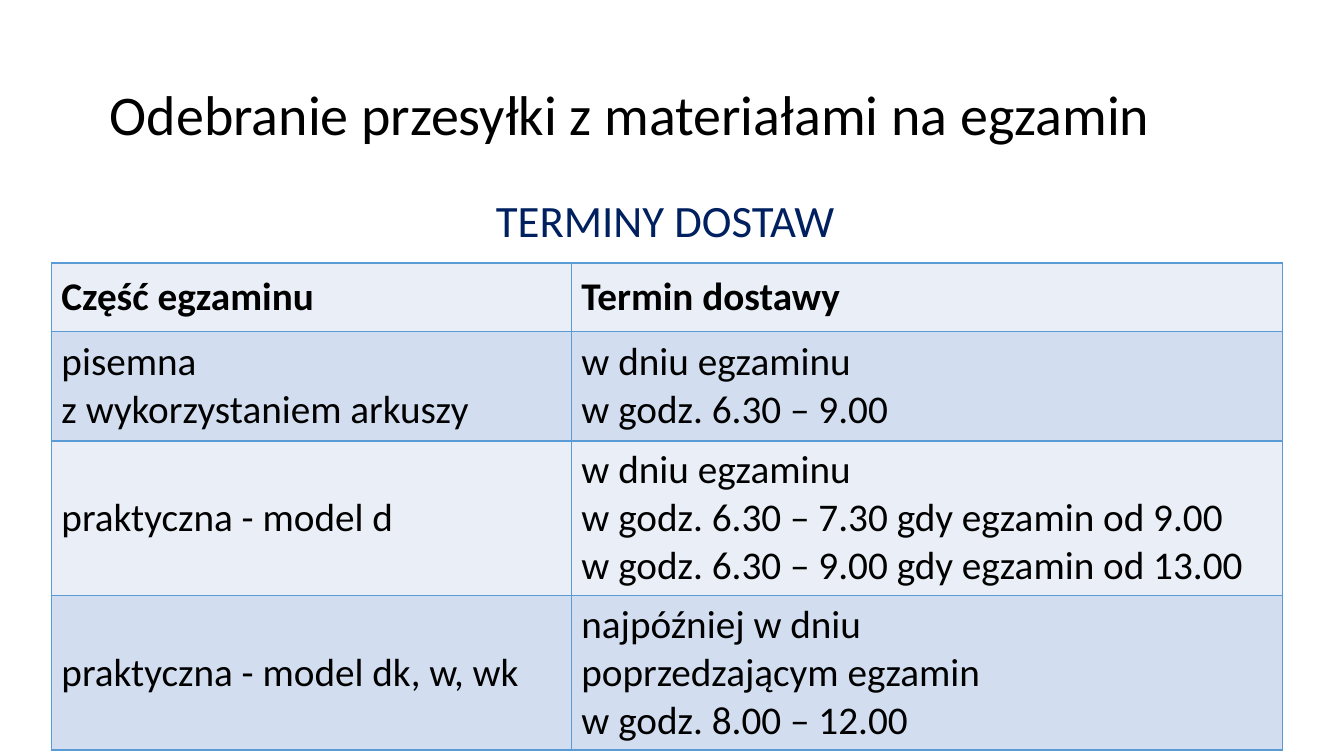
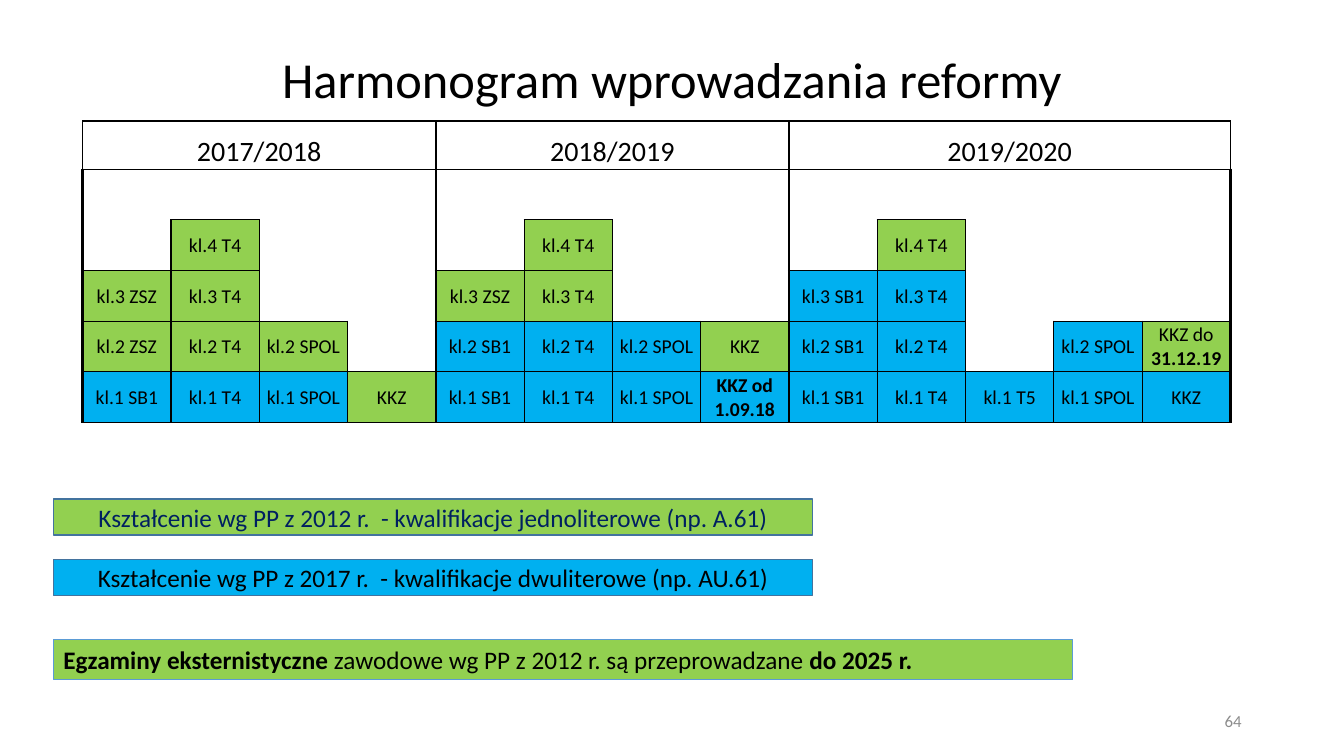
from dataclasses import dataclass

from lxml import etree
from pptx import Presentation
from pptx import util as u
from pptx.dml.color import RGBColor
from pptx.enum import shapes, text
from pptx.oxml.ns import qn


@dataclass(frozen=True)
class Theme:
    font: str = "Calibri"
    ink: str = "000000"
    navy: str = "002060"
    grey: str = "8C8C8C"
    old_programme: str = "92D050"
    new_programme: str = "00B0F0"
    rule: str = "5B9BD5"
    bar_edge: str = "43739E"
    bands: tuple = ("EAEFF7", "D2DEEF")
    title: int = 40
    title_small: int = 36
    subtitle: int = 32
    table: int = 28
    year: int = 20
    legend: int = 18
    label: int = 14
    number: int = 12


THEME = Theme()
WIDTH, HEIGHT = u.Inches(13.33), u.Inches(7.5)
COLUMNS, ROWS = 160, 90
LEFT, CENTER, RIGHT = text.PP_ALIGN.LEFT, text.PP_ALIGN.CENTER, text.PP_ALIGN.RIGHT
MIDDLE, BOTTOM = text.MSO_ANCHOR.MIDDLE, text.MSO_ANCHOR.BOTTOM

DELIVERIES = [
    ("*Część egzaminu*", "*Termin dostawy*"),
    ("pisemna\nz wykorzystaniem arkuszy", "w dniu egzaminu\nw godz. 6.30 – 9.00"),
    ("praktyczna - model d",
     "w dniu egzaminu\nw godz. 6.30 – 7.30 gdy egzamin od 9.00\n"
     "w godz. 6.30 – 9.00 gdy egzamin od 13.00"),
    ("praktyczna - model dk, w, wk",
     "najpóźniej w dniu\npoprzedzającym egzamin\nw godz. 8.00 – 12.00"),
]

YEARS = {
    "2017/2018": [
        (["kl.1 SB1"], ["kl.2 ZSZ", "kl.3 ZSZ"]),
        (["kl.1 T4"], ["kl.2 T4", "kl.3 T4", "kl.4 T4"]),
        (["kl.1 SPOL"], ["kl.2 SPOL"]),
        ([], ["KKZ"]),
    ],
    "2018/2019": [
        (["kl.1 SB1", "kl.2 SB1"], ["kl.3 ZSZ"]),
        (["kl.1 T4", "kl.2 T4"], ["kl.3 T4", "kl.4 T4"]),
        (["kl.1 SPOL", "kl.2 SPOL"], []),
        (["*KKZ od 1.09.18*"], ["KKZ"]),
    ],
    "2019/2020": [
        (["kl.1 SB1", "kl.2 SB1", "kl.3 SB1"], []),
        (["kl.1 T4", "kl.2 T4", "kl.3 T4"], ["kl.4 T4"]),
        (["kl.1 T5"], []),
        (["kl.1 SPOL", "kl.2 SPOL"], []),
        (["KKZ"], ["KKZ do *31.12.19*"]),
    ],
}


def across(columns):
    return round(WIDTH * columns / COLUMNS)


def down(rows):
    return round(HEIGHT * rows / ROWS)


def place(left, top, width, height):
    return across(left), down(top), across(width), down(height)


def write(frame, content, size, color=THEME.ink, align=LEFT, spacing=None):
    frame.word_wrap = True
    for index, line in enumerate(content.split("\n")):
        para = frame.add_paragraph() if index else frame.paragraphs[0]
        para.alignment = align
        if spacing:
            para.line_spacing = spacing
        para.font.name = THEME.font
        para.font.size = u.Pt(size)
        para.font.color.rgb = RGBColor.from_string(color)
        for order, part in enumerate(line.split("*")):
            if part:
                span = para.add_run()
                span.text = part
                if order % 2:
                    span.font.bold = True


def add_text(page, area, content, size, **style):
    box = page.shapes.add_textbox(*place(*area))
    box.text_frame.vertical_anchor = MIDDLE
    write(box.text_frame, content, size, **style)


def add_title(page, left, top, content, size, align=LEFT):
    add_text(page, (left, top, 138, 17.4), content, size, align=align, spacing=0.9)


def add_bar(page, top, width, height, content, fill, edge=THEME.bar_edge,
            edge_width=1, **style):
    bar = page.shapes.add_shape(
        shapes.MSO_SHAPE.RECTANGLE, *place(6.36, top, width, height))
    bar.shadow.inherit = False
    bar.fill.solid()
    bar.fill.fore_color.rgb = RGBColor.from_string(fill)
    bar.line.color.rgb = RGBColor.from_string(edge)
    bar.line.width = u.Pt(edge_width)
    bar.text_frame.vertical_anchor = MIDDLE
    write(bar.text_frame, content, THEME.legend, **style)


def add_grid(page, left, top, widths, heights):
    frame = page.shapes.add_table(
        len(heights), len(widths), *place(left, top, sum(widths), sum(heights)))
    table = frame.table
    table.first_row = table.horz_banding = False
    for column, width in zip(table.columns, widths):
        column.width = across(width)
    for row, height in zip(table.rows, heights):
        row.height = down(height)
    return table


def dress(cell, fill, color, left, right, top, bottom):
    properties = cell._tc.get_or_add_tcPr()
    for side, width in zip("LRTB", (left, right, top, bottom)):
        line = etree.SubElement(properties, qn(f"a:ln{side}"), w=str(u.Pt(width)))
        if width:
            solid = etree.SubElement(line, qn("a:solidFill"))
            etree.SubElement(solid, qn("a:srgbClr"), val=color)
        else:
            etree.SubElement(line, qn("a:noFill"))
    if fill:
        cell.fill.solid()
        cell.fill.fore_color.rgb = RGBColor.from_string(fill)
    else:
        cell.fill.background()


def fill_label(cell, content, size, anchor):
    cell.margin_left = cell.margin_right = cell.margin_top = u.Inches(0.01)
    cell.margin_bottom = 0
    cell.vertical_anchor = anchor
    write(cell.text_frame, content, size, align=CENTER)


def add_deliveries(page):
    table = add_grid(page, 6.12, 31.3, (61.9, 84.7), (8.2, 13, 18.4, 18.4))
    for row, entries in enumerate(DELIVERIES):
        for column, content in enumerate(entries):
            cell = table.cell(row, column)
            dress(cell, THEME.bands[row % 2], THEME.rule, 1, 1, 1, 1)
            cell.vertical_anchor = MIDDLE
            write(cell.text_frame, content, THEME.table)


def add_schedule(page):
    stacks = [stack for year in YEARS.values() for stack in year]
    starts = [0]
    for year in YEARS.values():
        starts.append(starts[-1] + len(year))
    count, levels = len(stacks), 5
    blocks = {}
    for column, (new, old) in enumerate(stacks):
        colored = [(label, THEME.new_programme) for label in new]
        colored += [(label, THEME.old_programme) for label in old]
        for level, block in enumerate(colored):
            blocks[levels - level, column] = block

    def filled(row, column):
        return row == 0 or (row, column) in blocks

    def upright(row, column):
        if column in starts:
            return 1 if row == 0 and column in (0, count) else 2
        return int(row > 0 and (filled(row, column - 1) or filled(row, column)))

    def level_line(row, column):
        sides = (row > 0 and filled(row - 1, column)) + filled(row, column)
        return (0, 1, 0.5)[sides]

    table = add_grid(page, 9.85, 14.4, [10.51] * count, [5.75] + [6.03] * levels)
    for row in range(levels + 1):
        for column in range(count):
            cell = table.cell(row, column)
            end = column + 1
            if row == 0 and column in starts:
                end = starts[starts.index(column) + 1]
            label, fill = blocks.get((row, column), (None, None))
            dress(cell, fill, THEME.ink, upright(row, column), upright(row, end),
                  level_line(row, column), level_line(row + 1, column))
            if label:
                fill_label(cell, label, THEME.label, MIDDLE)
    for year, start, end in zip(YEARS, starts, starts[1:]):
        cell = table.cell(0, start)
        cell.merge(table.cell(0, end - 1))
        fill_label(cell, year, THEME.year, BOTTOM)


def build_deliveries(page):
    add_deliveries(page)
    add_text(page, (11.2, 22.3, 136, 8.6), "TERMINY DOSTAW", THEME.subtitle,
             color=THEME.navy, align=CENTER, spacing=0.9)
    add_title(page, 11.9, 5.3, "Odebranie przesyłki z materiałami na egzamin",
              THEME.title)


def build_reform(page):
    add_title(page, 11, 1.1, "Harmonogram wprowadzania reformy",
              THEME.title_small, CENTER)
    add_text(page, (113, 83.4, 36, 4.8), "64", THEME.number,
             color=THEME.grey, align=RIGHT)
    add_bar(page, 59.4, 90.4, 4.3,
            "Kształcenie wg PP z 2012 r.  - kwalifikacje jednoliterowe (np. A.61)",
            THEME.old_programme, color=THEME.navy, align=CENTER)
    add_bar(page, 66.6, 90.4, 4.3,
            "Kształcenie wg PP z 2017 r.  - kwalifikacje dwuliterowe (np. AU.61)",
            THEME.new_programme, align=CENTER)
    add_bar(page, 76.1, 121.3, 4.8,
            "*Egzaminy eksternistyczne *zawodowe wg PP z 2012 r. są przeprowadzane "
            "*do 2025 r.*", THEME.old_programme, THEME.rule, 0.75)
    add_schedule(page)


def main():
    deck = Presentation()
    deck.slide_width, deck.slide_height = WIDTH, HEIGHT
    for build in (build_deliveries, build_reform):
        build(deck.slides.add_slide(deck.slide_layouts[6]))
    deck.save("out.pptx")


if __name__ == "__main__":
    main()
